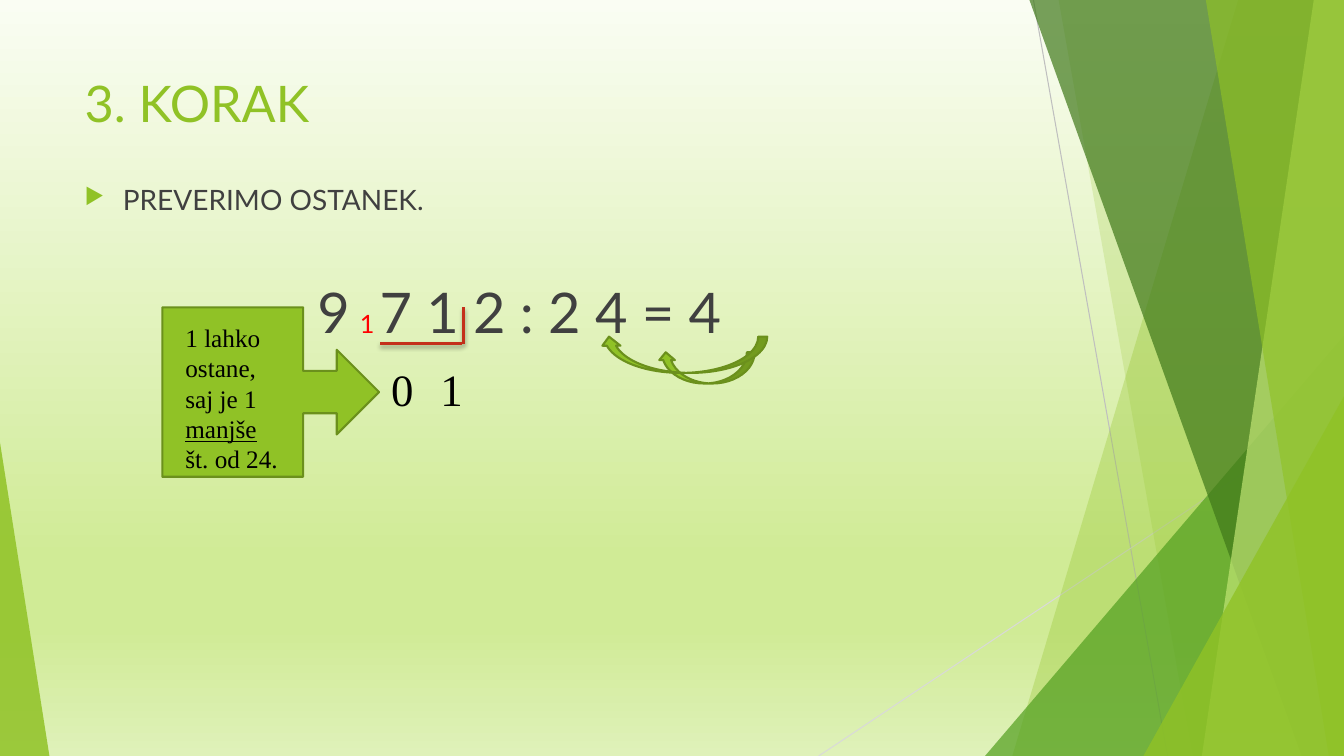
"""Build the slide for step 3 of a written division lesson."""
from dataclasses import dataclass

from pptx import Presentation
from pptx.dml.color import RGBColor
from pptx.enum.shapes import MSO_CONNECTOR, MSO_SHAPE
from pptx.oxml import parse_xml
from pptx.oxml.ns import qn
from pptx.util import Inches, Pt
from lxml.etree import SubElement

LIME = RGBColor(0x90, 0xC2, 0x26)
PALE_LIME = RGBColor(0xC0, 0xE4, 0x74)
GREEN = RGBColor(0x54, 0xA0, 0x21)
DARK_GREEN = RGBColor(0x3F, 0x78, 0x19)
OUTLINE = RGBColor(0x6B, 0x90, 0x1C)
GRAY = RGBColor(0xBF, 0xBF, 0xBF)
LIGHT_GRAY = RGBColor(0xD9, 0xD9, 0xD9)
CHARCOAL = RGBColor(0x40, 0x40, 0x40)
BLACK = RGBColor(0, 0, 0)
RED = RGBColor(0xFF, 0, 0)
BRICK = RGBColor(0xC4, 0x2F, 0x1A)
BACKGROUND_STOPS = (
    (0, RGBColor(0xFA, 0xFD, 0xF3)),
    (74, RGBColor(0xD0, 0xEB, 0x96)),
    (83, RGBColor(0xD0, 0xEB, 0x96)),
    (100, RGBColor(0xDF, 0xF1, 0xB9)),
)
WIDTH, HEIGHT = 13.33, 7.5
SANS, SERIF = "Lato", "Times New Roman"


@dataclass(frozen=True)
class Band:
    """A band from its slanted left edge to the right side of the slide."""
    top: float
    bottom: float
    color: RGBColor
    opacity: int


@dataclass(frozen=True)
class Wedge:
    """A right triangle standing on the bottom of the slide."""
    left: float
    width: float
    height: float
    peak: float
    color: RGBColor
    opacity: int


@dataclass(frozen=True)
class Line:
    start: tuple[float, float]
    end: tuple[float, float]
    color: RGBColor
    weight: float
    shadow: bool = False


@dataclass(frozen=True)
class GreenShape:
    kind: MSO_SHAPE
    box: tuple[float, float, float, float]
    rotation: int = 0


@dataclass(frozen=True)
class Run:
    text: str
    size: float
    color: RGBColor = CHARCOAL
    underline: bool = False


FACETS = (
    Band(12.28, 10.04, LIME, 30),
    Band(10.5, 11.83, LIME, 20),
    Wedge(9.77, 3.56, 4.17, 1, GREEN, 72),
    Band(10.21, 12.91, DARK_GREEN, 70),
    Band(13.03, 11.92, PALE_LIME, 70),
    Band(11.96, 13.18, LIME, 65),
    Wedge(11.34, 1.99, 3.57, 1, LIME, 80),
    Wedge(0, 0.49, 3.11, 0, LIME, 85),
)
RAYS = (
    Line((10.25, 0), (11.58, HEIGHT), GRAY, 0.75),
    Line((WIDTH, 4.03), (8.12, HEIGHT), LIGHT_GRAY, 0.75),
)
CORNER = (
    Line((4.6, 3.05), (4.6, 3.41), BRICK, 2, True),
    Line((4.58, 3.41), (3.77, 3.41), BRICK, 2, True),
)
GREEN_SHAPES = (
    GreenShape(MSO_SHAPE.CURVED_LEFT_ARROW, (6.85, 3.17, 0.31, 0.96), 90),
    GreenShape(MSO_SHAPE.CURVED_LEFT_ARROW, (6.6, 2.69, 0.36, 1.66), 90),
    GreenShape(MSO_SHAPE.RIGHT_ARROW_CALLOUT, (1.61, 3.05, 2.15, 1.68)),
)
REMAINDER = (("0", 3.78), ("1", 4.27))


def paint_background(slide) -> None:
    fill = slide.background.fill
    fill.gradient()
    fill.gradient_angle = 270
    stop_list = slide.background._cSld.find(".//" + qn("a:gsLst"))
    for stop in list(stop_list):
        stop_list.remove(stop)
    for position, color in BACKGROUND_STOPS:
        stop = SubElement(stop_list, qn("a:gs"), pos=str(position * 1000))
        SubElement(stop, qn("a:srgbClr"), val=str(color))


def draw_facet(slide, facet: Band | Wedge) -> None:
    if isinstance(facet, Band):
        corners = ((WIDTH, 0), (WIDTH, HEIGHT), (facet.bottom, HEIGHT))
        builder = slide.shapes.build_freeform(Inches(facet.top), 0)
        builder.add_line_segments([(Inches(x), Inches(y)) for x, y in corners])
        shape = builder.convert_to_shape()
    else:
        shape = slide.shapes.add_shape(
            MSO_SHAPE.ISOSCELES_TRIANGLE, Inches(facet.left),
            Inches(HEIGHT - facet.height), Inches(facet.width), Inches(facet.height))
        shape.adjustments[0] = facet.peak
    shape.shadow.inherit = False
    shape.line.fill.background()
    shape.fill.solid()
    shape.fill.fore_color.rgb = facet.color
    color = shape._element.spPr.find(qn("a:solidFill")).find(qn("a:srgbClr"))
    SubElement(color, qn("a:alpha"), val=str(facet.opacity * 1000))


def draw_line(slide, line: Line) -> None:
    ends = [Inches(value) for value in line.start + line.end]
    connector = slide.shapes.add_connector(MSO_CONNECTOR.STRAIGHT, *ends)
    connector.line.color.rgb = line.color
    connector.line.width = Pt(line.weight)
    effects = SubElement(connector._element.spPr, qn("a:effectLst"))
    if line.shadow:
        effects.append(parse_xml(
            '<a:outerShdw xmlns:a="http://schemas.openxmlformats.org/drawingml/2006/main" '
            'blurRad="38100" dist="25400" dir="5400000" rotWithShape="0">'
            '<a:srgbClr val="000000"><a:alpha val="35000"/></a:srgbClr></a:outerShdw>'))


def draw_green_shape(slide, item: GreenShape) -> None:
    shape = slide.shapes.add_shape(item.kind, *(Inches(value) for value in item.box))
    shape.rotation = item.rotation
    shape.shadow.inherit = False
    shape.fill.solid()
    shape.fill.fore_color.rgb = LIME
    shape.line.color.rgb = OUTLINE
    shape.line.width = Pt(1.5)


def add_text(slide, runs: tuple[Run, ...], *, box: tuple[float, float, float, float],
             font: str = SANS, bullet: bool = False) -> None:
    text_box = slide.shapes.add_textbox(*(Inches(value) for value in box))
    text_box.text_frame.word_wrap = True
    paragraph = text_box.text_frame.paragraphs[0]
    for item in runs:
        run = paragraph.add_run()
        run.text = item.text
        run.font.name = font
        run.font.size = Pt(item.size)
        run.font.color.rgb = item.color
        run.font.underline = item.underline
    if bullet:
        properties = paragraph._p.get_or_add_pPr()
        properties.set("marL", str(Inches(0.38)))
        properties.set("indent", str(-Inches(0.38)))
        color = SubElement(properties, qn("a:buClr"))
        SubElement(color, qn("a:srgbClr"), val=str(LIME))
        SubElement(properties, qn("a:buSzPct"), val="80000")
        SubElement(properties, qn("a:buChar"), char="▶")


def main() -> None:
    presentation = Presentation()
    presentation.slide_width = Inches(WIDTH)
    presentation.slide_height = Inches(HEIGHT)
    slide = presentation.slides.add_slide(presentation.slide_layouts[6])
    paint_background(slide)
    for ray in RAYS:
        draw_line(slide, ray)
    for facet in FACETS:
        draw_facet(slide, facet)
    add_text(slide, (Run("3. KORAK", 36, LIME),), box=(0.74, 0.67, 9.4, 0.88))
    add_text(slide, (Run("PREVERIMO OSTANEK.", 20),), box=(0.74, 1.76, 9.4, 0.5), bullet=True)
    equation = (Run("9", 40), Run(" ", 28), Run("1", 18, RED), Run(" ", 14),
                Run("7 1 2 : 2 4 = 4", 40))
    add_text(slide, equation, box=(3.05, 2.7, 4.6, 0.77))
    for line in CORNER:
        draw_line(slide, line)
    for item in GREEN_SHAPES:
        draw_green_shape(slide, item)
    for digit, left in REMAINDER:
        add_text(slide, (Run(digit, 32, BLACK),), box=(left, 3.54, 0.45, 0.64), font=SERIF)
    note = (Run("1 lahko ostane, saj je 1 ", 18, BLACK), Run("manjše", 18, BLACK, True),
            Run(" št. od 24.", 18, BLACK))
    add_text(slide, note, box=(1.74, 3.15, 1.18, 1.62), font=SERIF)
    presentation.save("out.pptx")


if __name__ == "__main__":
    main()
